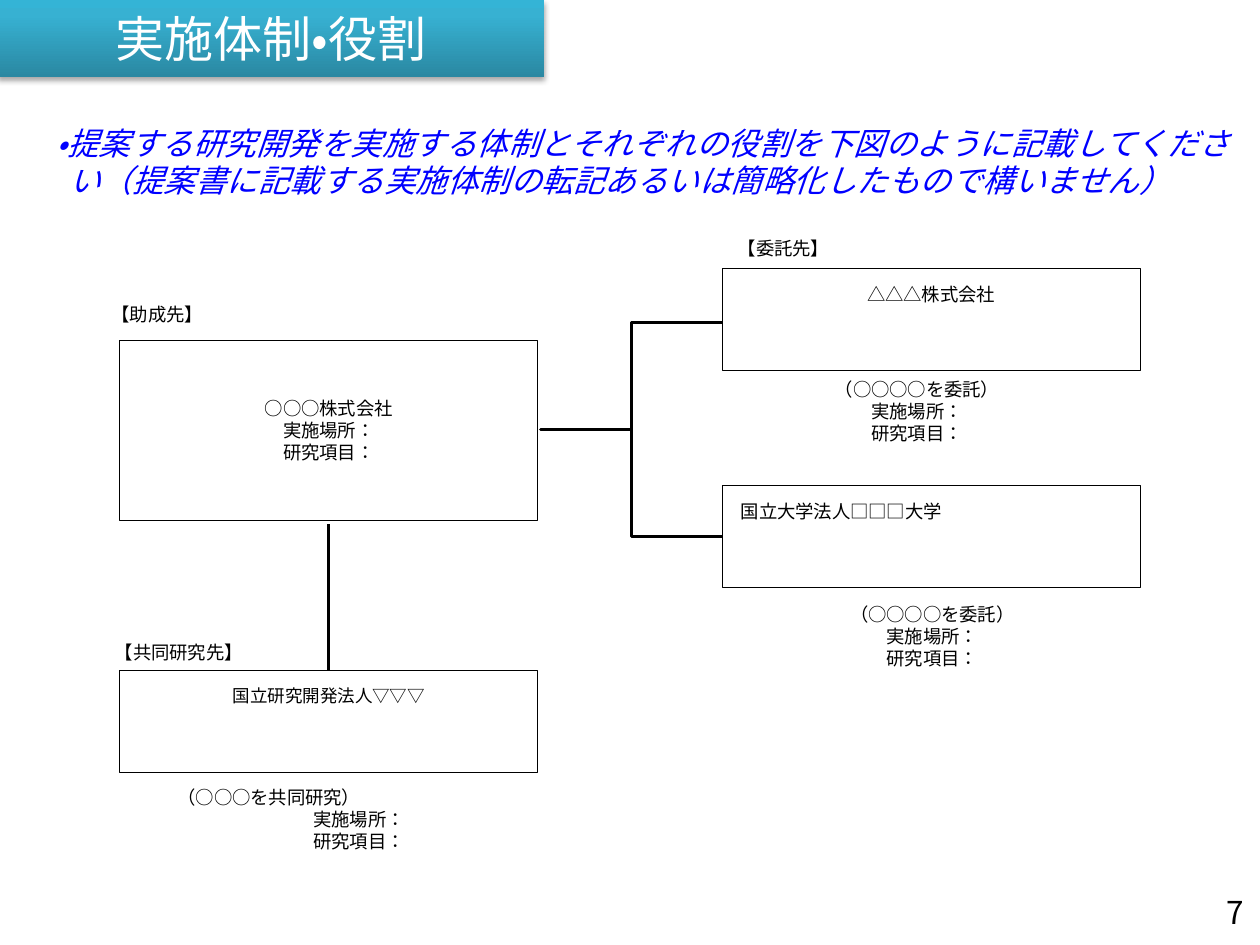
"""Build the slide on the project's organisation and the roles of its members."""
from pptx import Presentation, oxml
from pptx import util as u
from pptx.dml.color import RGBColor
from pptx.enum import lang, shapes, text

COLORS = {"ink": "000000", "paper": "FFFFFF", "note": "0000FF",
          "deep": "2A88A2", "mid": "37B1D2", "light": "34B4D6"}
NAMESPACE = 'xmlns:a="http://schemas.openxmlformats.org/drawingml/2006/main"'
LEFT, RIGHT, WIDTH, SMALL = 68.4, 412.6, 239, 58.3
CENTER, JUSTIFY = text.PP_ALIGN.CENTER, text.PP_ALIGN.JUSTIFY
MIDDLE = text.MSO_ANCHOR.MIDDLE

TITLE = "実施体制・役割"
GUIDE = ("・提案する研究開発を実施する体制とそれぞれの役割を下図のように記載してください"
         "（提案書に記載する実施体制の転記あるいは簡略化したもので構いません）")
DETAILS = ["実施場所：", "研究項目："]
MEMBERS = {
    "grantee": ((LEFT, 194.4, WIDTH, 103), ["○○○株式会社"] + DETAILS,
                {"anchor": MIDDLE, "insets": (0, 11.5)}),
    "contractor": ((RIGHT, 153.4, WIDTH, SMALL), ["△△△株式会社"], {}),
    "university": ((RIGHT, 277.2, WIDTH, SMALL), ["国立大学法人□□□大学"],
                   {"align": JUSTIFY, "indent": 10.8}),
    "partner": ((LEFT, 383, WIDTH, SMALL), ["国立研究開発法人▽▽▽"], {"size": 10}),
}
ROLES = [
    ((429.1, 216, 190, 46.8), "（○○○○を委託）", CENTER),
    ((437.8, 344.9, 190, 49.7), "（○○○○を委託）", CENTER),
    ((101.5, 449.3, 207.4, 51.1), "（○○○を共同研究）", JUSTIFY),
]
LABELS = [
    ((48.2, 169.9, 83.5, 20.2), "【助成先】"),
    ((48.2, 362.9, 108, 20.2), "【共同研究先】"),
    ((393.8, 131.8, 108, 20.2), "【委託先】"),
]


def color(name):
    return RGBColor.from_string(COLORS[name])


def points(values):
    return [u.Pt(value) for value in values]


def place(box, area):
    box.left, box.top, box.width, box.height = points(area)


def write(box, lines, size=10.5, font="Lato", ink="ink", align=CENTER, first_align=None,
          anchor=text.MSO_ANCHOR.TOP, insets=(7.2, 3.6), margin=0, indent=0,
          italic=False, wrap=True):
    """Fill a box with formatted paragraphs."""
    frame = box.text_frame
    frame.text = "\n".join(lines)
    frame.word_wrap, frame.vertical_anchor = wrap, anchor
    frame.auto_size = text.MSO_AUTO_SIZE.NONE
    frame.margin_left = frame.margin_right = u.Pt(insets[0])
    frame.margin_top = frame.margin_bottom = u.Pt(insets[1])
    for number, para in enumerate(frame.paragraphs):
        para.alignment = first_align if first_align and number == 0 else align
        para.space_before = u.Pt(0)
        properties = para._p.get_or_add_pPr()
        properties.set("marL", str(u.Pt(margin)))
        properties.set("indent", str(u.Pt(indent)))
        properties.append(oxml.parse_xml(f"<a:buNone {NAMESPACE}/>"))
        for span in para.runs:
            span.font.size, span.font.name, span.font.italic = u.Pt(size), font, italic
            span.font.color.rgb = color(ink)
            span.font.language_id = lang.MSO_LANGUAGE_ID.JAPANESE


def add_text(page, area, lines, **style):
    write(page.shapes.add_textbox(*points(area)), lines, **style)


def add_outline(page, kind, area, weight):
    box = page.shapes.add_shape(kind, *points(area))
    box.shadow.inherit = False
    box.line.color.rgb, box.line.width = color("ink"), u.Pt(weight)
    return box


def add_member(page, area, lines, style):
    box = add_outline(page, shapes.MSO_SHAPE.RECTANGLE, area, 0.5)
    box.fill.solid()
    box.fill.fore_color.rgb = color("paper")
    write(box, lines, **{"insets": (0, 8.6), **style})
    return box


def style_banner(box):
    """Give the title its gradient and soft shadow."""
    stops = "".join(f'<a:gs pos="{position}"><a:srgbClr val="{COLORS[name]}"/></a:gs>'
                    for position, name in ((0, "deep"), (80000, "mid"), (100000, "light")))
    for markup in (
            f'<a:gradFill {NAMESPACE} rotWithShape="1"><a:gsLst>{stops}</a:gsLst>'
            '<a:lin ang="16200000" scaled="0"/></a:gradFill>',
            f'<a:effectLst {NAMESPACE}><a:outerShdw blurRad="{u.Pt(3.1)}" dist="{u.Pt(1.8)}" '
            f'dir="5400000" rotWithShape="0"><a:srgbClr val="{COLORS["ink"]}">'
            '<a:alpha val="35000"/></a:srgbClr></a:outerShdw></a:effectLst>'):
        box._element.spPr.append(oxml.parse_xml(markup))


def main():
    deck = Presentation()
    deck.slide_width, deck.slide_height = u.Pt(720), u.Pt(540)
    page = deck.slides.add_slide(deck.slide_layouts[1])

    title, guide = page.shapes.title, page.placeholders[1]
    place(title, (-1.4, 0, 312.5, 43.9))
    style_banner(title)
    write(title, [TITLE], size=28, font="Calibri", ink="paper", anchor=MIDDLE)
    place(guide, (25.2, 67, 685.4, 51.1))
    write(guide, [GUIDE], size=18, font="Calibri", ink="note", italic=True,
          align=text.PP_ALIGN.LEFT, margin=7.2, indent=-7.2)
    add_text(page, (668.9, 511.9, 41.8, 18), ["7"], size=18, font="Noto Sans CJK JP",
             align=text.PP_ALIGN.RIGHT, anchor=MIDDLE, insets=(0, 0), wrap=False)

    brace = add_outline(page, shapes.MSO_SHAPE.LEFT_BRACE, (308.9, 184.3, 103.7, 122.4), 1.5)
    brace.fill.background()
    brace.adjustments[0], brace.adjustments[1] = 0, 0.5

    members = {name: add_member(page, *member) for name, member in MEMBERS.items()}
    middle = LEFT + WIDTH / 2
    link = page.shapes.add_connector(shapes.MSO_CONNECTOR.STRAIGHT,
                                     *points((middle, 299.5, middle, 383)))
    link.end_connect(members["partner"], 0)
    link.line.color.rgb, link.line.width = color("ink"), u.Pt(1.5)
    link._element.spPr.append(oxml.parse_xml(f"<a:effectLst {NAMESPACE}/>"))

    for area, role, align in ROLES:
        add_text(page, area, [role] + DETAILS, first_align=align, insets=(0, 0))
    for area, label in LABELS:
        add_text(page, area, [label])
    deck.save("out.pptx")


if __name__ == "__main__":
    main()
